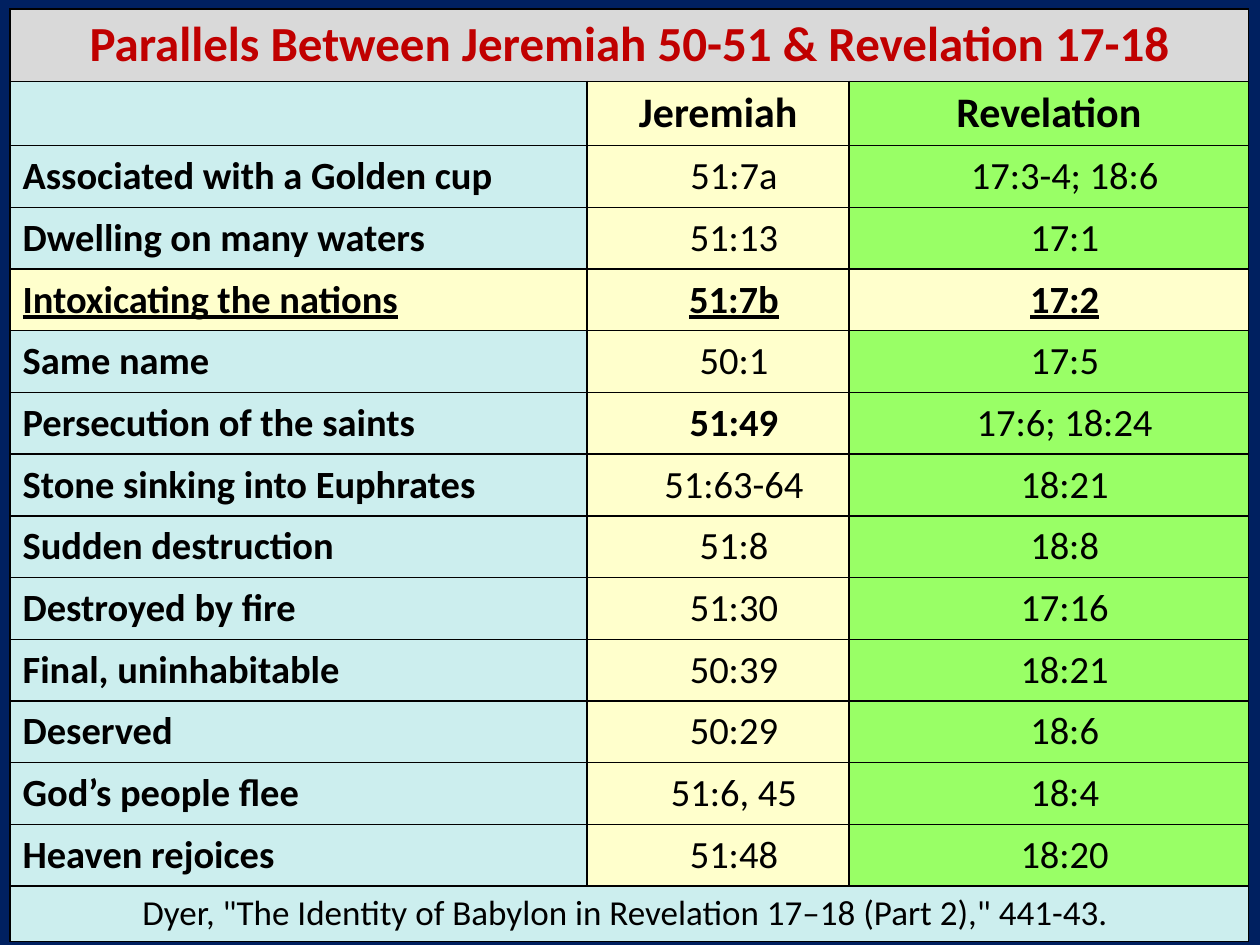
from lxml import etree
from pptx import Presentation
from pptx.dml.color import RGBColor
from pptx.enum.text import MSO_ANCHOR, PP_ALIGN
from pptx.oxml.ns import qn
from pptx.util import Inches, Pt

LEFT, CENTER = PP_ALIGN.LEFT, PP_ALIGN.CENTER
MIDDLE = MSO_ANCHOR.MIDDLE

# Content
TITLE = "Parallels Between Jeremiah 50-51 & Revelation 17-18"
HEADS = ("", "Jeremiah", "Revelation")
ROWS = [
    ("Associated with a Golden cup", "51:7a", "17:3-4; 18:6"),
    ("Dwelling on many waters", "51:13", "17:1"),
    ("Intoxicating the nations", "51:7b", "17:2"),
    ("Same name", "50:1", "17:5"),
    ("Persecution of the saints", "51:49", "17:6; 18:24"),
    ("Stone sinking into Euphrates", "51:63-64", "18:21"),
    ("Sudden destruction", "51:8", "18:8"),
    ("Destroyed by fire", "51:30", "17:16"),
    ("Final, uninhabitable", "50:39", "18:21"),
    ("Deserved", "50:29", "18:6"),
    ("God’s people flee", "51:6, 45", "18:4"),
    ("Heaven rejoices", "51:48", "18:20"),
]
SOURCE = 'Dyer, "The Identity of Babylon in Revelation 17–18 (Part 2)," 441-43. '
KEY = "Intoxicating the nations"
STRONG = "51:49"

# Theme
THEME = {
    "font": "Calibri",
    "back": "002060", "ink": "000000", "red": "C00000",
    "gray": "D9D9D9", "blue": "CCEEEE", "cream": "FFFFCC", "green": "99FF66",
    "title": 28, "head": 24, "body": 22, "source": 20,
    "line": 1,
}
FILLS = ("blue", "cream", "green")

# Grid
COLS = (4.58, 2.08, 3.17)
HIGHS = [0.57] + [0.51] + [0.49] * len(ROWS) + [0.44]
INDENT = 0.25


def color(name):
    return RGBColor.from_string(THEME[name])


def border(cell):
    props = cell._tc.get_or_add_tcPr()
    for side in ("lnL", "lnR", "lnT", "lnB"):
        line = etree.SubElement(props, qn("a:" + side), w=str(Pt(THEME["line"])))
        fill = etree.SubElement(line, qn("a:solidFill"))
        etree.SubElement(fill, qn("a:srgbClr"), val=THEME["ink"])


def write(cell, text, size, ink="ink", align=CENTER, indent=0, **form):
    cell.vertical_anchor = MIDDLE
    para = cell.text_frame.paragraphs[0]
    para.alignment = align
    if indent:
        props = para._p.get_or_add_pPr()
        props.set("marL", str(Inches(indent)))
        props.set("indent", "0")
    if not text:
        return
    run = para.add_run()
    run.text = text
    form.update(name=THEME["font"], size=Pt(THEME[size]))
    for key, value in form.items():
        setattr(run.font, key, value)
    run.font.color.rgb = color(ink)


def paint(cell, fill):
    cell.fill.solid()
    cell.fill.fore_color.rgb = color(fill)


def main():
    deck = Presentation()
    deck.slide_width, deck.slide_height = Inches(10), Inches(7.5)
    slide = deck.slides.add_slide(deck.slide_layouts[6])
    slide.background.fill.solid()
    slide.background.fill.fore_color.rgb = color("back")

    # Table frame
    table = slide.shapes.add_table(
        len(HIGHS), len(COLS), Inches(0.08), Inches(0.07),
        Inches(sum(COLS)), Inches(sum(HIGHS))).table
    table.first_row = table.horz_banding = False
    for col, width in zip(table.columns, COLS):
        col.width = Inches(width)
    for row, high in zip(table.rows, HIGHS):
        row.height = Inches(high)
    for cell in table.iter_cells():
        border(cell)

    # Title and source bands
    last = len(HIGHS) - 1
    for row, fill in ((0, "gray"), (last, "blue")):
        table.cell(row, 0).merge(table.cell(row, len(COLS) - 1))
        paint(table.cell(row, 0), fill)
    write(table.cell(0, 0), TITLE, "title", "red", bold=True)
    write(table.cell(last, 0), SOURCE, "source", bold=False)

    # Column heads
    for col, (text, fill) in enumerate(zip(HEADS, FILLS)):
        paint(table.cell(1, col), fill)
        write(table.cell(1, col), text, "head", bold=True)

    # Parallels
    for row, texts in enumerate(ROWS, 2):
        key = texts[0] == KEY
        for col, (text, fill) in enumerate(zip(texts, FILLS)):
            cell = table.cell(row, col)
            paint(cell, "cream" if key else fill)
            write(cell, text, "body",
                  align=CENTER if col else LEFT,
                  indent=INDENT if col else 0,
                  bold=col == 0 or key or text == STRONG,
                  underline=key)

    deck.save("out.pptx")


if __name__ == "__main__":
    main()
